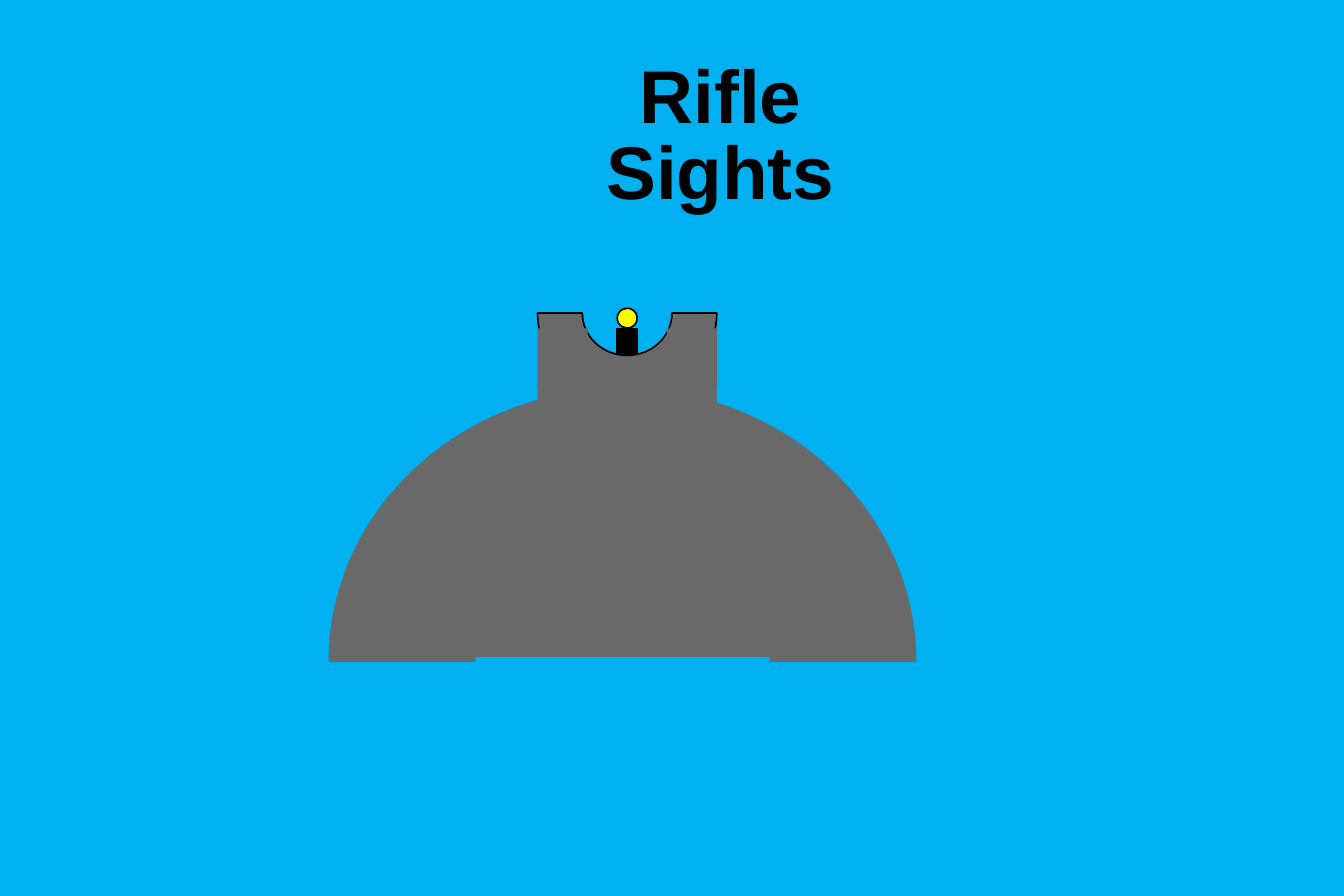
import pptx
import pptx.dml.color
import pptx.enum.shapes
import pptx.enum.text
import pptx.oxml.ns
import pptx.util

Inches = pptx.util.Inches
Pt = pptx.util.Pt
qn = pptx.oxml.ns.qn
KIND = pptx.enum.shapes.MSO_SHAPE

SKY, STEEL, BLACK, BEAD = "00B0F0", "696969", "000000", "FAFD00"
AIM = 5.25  # x of the line of sight
POST = 1 / 6  # width of post and bead
BEND = 0.5523  # pull of a quarter ellipse towards its corner


def paint(fill, color):
    fill.solid()
    fill.fore_color.rgb = pptx.dml.color.RGBColor.from_string(color)


def assign(target, values):
    for name, value in values.items():
        setattr(target, name, value)


def style(shape, color, line=None):
    shape.shadow.inherit = False
    paint(shape.fill, color)
    if line:
        paint(shape.line.fill, line)
        shape.line.width = Pt(1)
    else:
        shape.line.fill.background()


def add_part(slide, kind, box, color, line=None):
    shape = slide.shapes.add_shape(kind, *map(Inches, box))
    style(shape, color, line)


def bend(edge, start, end, corner):
    """Turn a straight path edge into a quarter ellipse."""
    edge.tag = qn("a:cubicBezTo")
    for index, point in enumerate((start, end)):
        x, y = (round(p + BEND * (c - p)) for p, c in zip(point, corner))
        pull = edge.makeelement(qn("a:pt"), {"x": str(x), "y": str(y)})
        edge.insert(index, pull)


def add_arch(slide, center, radii, side, color, line=None):
    """Draw a half ring, half as wide inside; side is -1 for up, 1 for down."""
    (x, y), (rx, ry) = center, radii
    points = [(Inches(x + dx * rx), Inches(y + side * dy * ry))
              for dx, dy in ((-1, 0), (0, 1), (1, 0),
                             (0.5, 0), (0, 0.5), (-0.5, 0))]
    builder = slide.shapes.build_freeform(*points[0], scale=1.0)
    builder.add_line_segments(points[1:], close=True)
    shape = builder.convert_to_shape()

    local = [(px - shape.left, py - shape.top) for px, py in points]
    edges = list(shape.element.iter(qn("a:lnTo")))
    for first, apex, last in ((0, 1, 2), (3, 4, 5)):
        for start, end, foot in ((first, apex, first), (apex, last, last)):
            corner = local[foot][0], local[apex][1]
            bend(edges[start], local[start], local[end], corner)
    style(shape, color, line)


def add_title(slide, text, box):
    frame = slide.shapes.add_textbox(*map(Inches, box)).text_frame
    assign(frame, {
        "word_wrap": True,
        "auto_size": pptx.enum.text.MSO_AUTO_SIZE.SHAPE_TO_FIT_TEXT,
        "margin_left": Inches(0.05), "margin_right": Inches(0.05),
        "margin_top": Inches(0.02), "margin_bottom": Inches(0.02),
    })
    para = frame.paragraphs[0]
    assign(para, {"alignment": pptx.enum.text.PP_ALIGN.CENTER,
                  "line_spacing": 0.85})
    run = para.add_run()
    run.text = text
    assign(run.font, {"name": "Arial", "size": Pt(45), "bold": True})
    paint(run.font.fill, BLACK)


def main():
    deck = pptx.Presentation()
    assign(deck, {"slide_width": Inches(11.25), "slide_height": Inches(7.5)})
    slide = deck.slides.add_slide(deck.slide_layouts[6])
    paint(slide.background.fill, SKY)

    add_title(slide, "Rifle Sights", (4.44, 0.5, 3.18, 0.68))

    # Front post, then the rear notch around it
    left = AIM - POST / 2
    add_part(slide, KIND.RECTANGLE, (left, 2.75, POST, 0.42), BLACK, BLACK)
    add_arch(slide, (AIM, 2.62), (0.75, 0.71), 1, STEEL, BLACK)
    add_part(slide, KIND.RECTANGLE, (4.5, 3, 1.5, 0.5), STEEL)
    for wing in (4.5, 5.58):
        add_part(slide, KIND.RECTANGLE, (wing, 2.75, 0.42, 0.5), STEEL)
    add_part(slide, KIND.OVAL, (left, 2.58, POST, POST), BEAD, BLACK)

    # Barrel
    add_arch(slide, (5.21, 5.54), (2.46, 2.29), -1, STEEL)
    add_part(slide, KIND.RECTANGLE, (3.42, 4.33, 3.5, 1.17), STEEL)

    deck.save("out.pptx")


if __name__ == "__main__":
    main()
